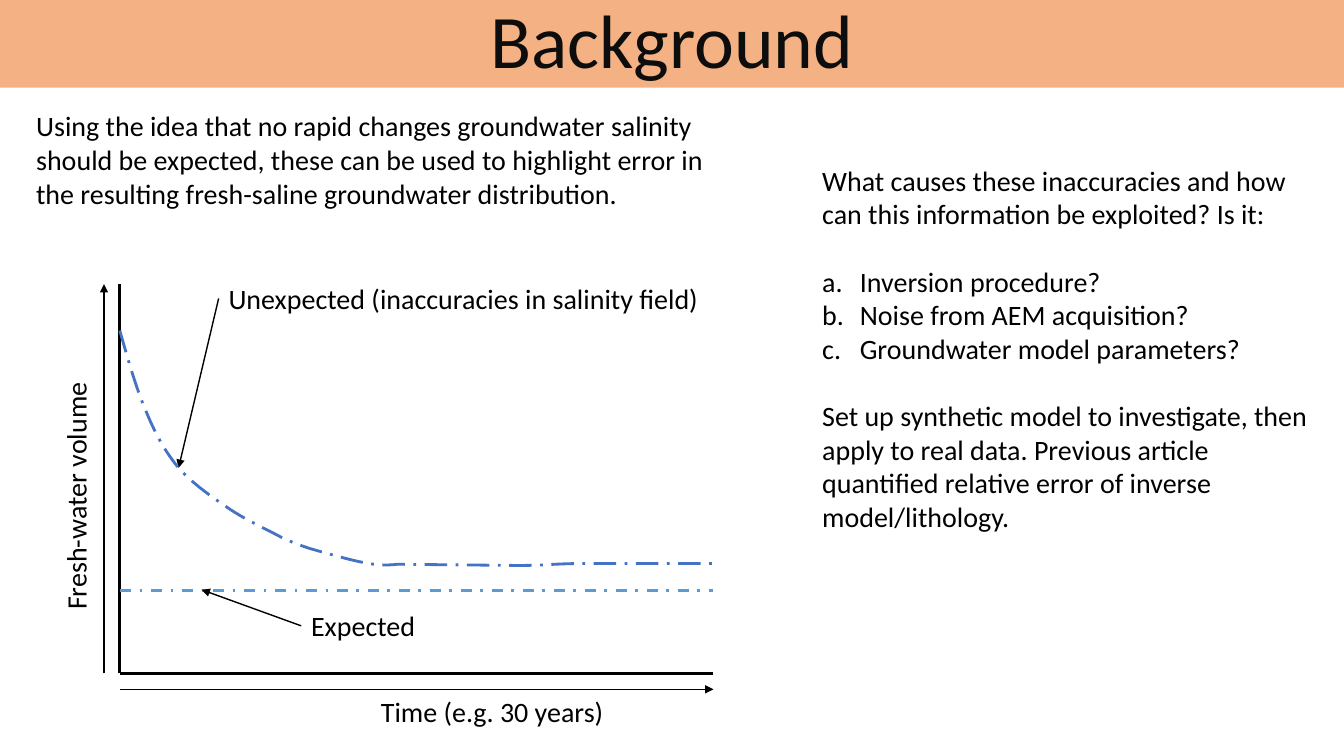
from lxml.etree import SubElement
from pptx import Presentation
from pptx.dml.color import RGBColor
from pptx.enum.dml import MSO_LINE
from pptx.enum.shapes import MSO_CONNECTOR, MSO_SHAPE
from pptx.enum.text import MSO_ANCHOR, PP_ALIGN
from pptx.oxml.ns import qn
from pptx.util import Cm, Pt

BLACK = RGBColor(0x00, 0x00, 0x00)
TITLE_INK = RGBColor(0x0D, 0x0D, 0x0D)
ORANGE = RGBColor(0xF4, 0xB1, 0x83)
LIGHT_BLUE = RGBColor(0x5B, 0x9B, 0xD5)
BLUE = RGBColor(0x44, 0x72, 0xC4)

LEFT, RIGHT, TOP, BASE = 3.02, 17.98, 7.16, 16.97
ARROW_X, ARROW_Y, EXPECTED_Y = 2.62, 17.37, 14.88
CURVE_STEPS = 12

deck = Presentation()
deck.slide_width, deck.slide_height = Cm(33.87), Cm(19.05)
slide = deck.slides.add_slide(deck.slide_layouts[6])
shapes = slide.shapes


def add_words(paragraph, words, size=20, color=BLACK):
    run = paragraph.add_run()
    run.text = words
    run.font.name = "Calibri"
    run.font.size = Pt(size)
    run.font.color.rgb = color


def add_frame(left, top, width, height, wrap, angle=0):
    box = shapes.add_textbox(Cm(left), Cm(top), Cm(width), Cm(height))
    box.rotation = angle
    box.text_frame.word_wrap = wrap
    return box.text_frame


for x1, y1, x2, y2, color, weight, dash, arrow in (
    (LEFT, BASE, LEFT, TOP, BLACK, 2.25, None, False),
    (LEFT, BASE, RIGHT, BASE, BLACK, 2.25, None, False),
    (LEFT, ARROW_Y, RIGHT, ARROW_Y, BLACK, 1, None, True),
    (ARROW_X, BASE, ARROW_X, TOP, BLACK, 1, None, True),
    (LEFT, EXPECTED_Y, RIGHT, EXPECTED_Y, LIGHT_BLUE, 2, MSO_LINE.DASH_DOT, False),
    (5.51, 7.52, 4.5, 11.79, BLACK, 1, None, True),
    (7.59, 15.77, 5.08, 14.86, BLACK, 1, None, True),
):
    stroke = shapes.add_connector(
        MSO_CONNECTOR.STRAIGHT, Cm(x1), Cm(y1), Cm(x2), Cm(y2))
    stroke.line.color.rgb = color
    stroke.line.width = Pt(weight)
    if dash:
        stroke.line.dash_style = dash
    if arrow:
        SubElement(stroke.line._get_or_add_ln(), qn("a:tailEnd"), type="triangle")
    SubElement(stroke._element.spPr, qn("a:effectLst"))

curve_start = (LEFT, 8.33)
curve_pieces = (
    ((3.23, 9.07), (3.43, 9.78), (3.68, 10.36)),
    ((3.91, 10.92), (4.14, 11.35), (4.5, 11.79)),
    ((4.85, 12.19), (5.38, 12.55), (5.82, 12.85)),
    ((6.25, 13.13), (6.76, 13.36), (7.09, 13.54)),
    ((7.42, 13.69), (7.42, 13.69), (7.8, 13.82)),
    ((8.15, 13.92), (8.94, 14.15), (9.3, 14.2)),
    ((9.68, 14.27), (10.01, 14.22), (10.01, 14.22)),
    ((10.01, 14.22), (13.03, 14.25), (13.03, 14.25)),
    ((13.77, 14.25), (13.72, 14.22), (14.55, 14.2)),
    ((15.37, 14.2), (16.66, 14.2), (17.96, 14.2)),
)
curve_points = []
piece_start = curve_start
for pull_out, pull_in, piece_end in curve_pieces:
    for step in range(1, CURVE_STEPS + 1):
        t = step / CURVE_STEPS
        curve_points.append(tuple(
            Cm((1 - t) ** 3 * a + 3 * (1 - t) ** 2 * t * b
               + 3 * (1 - t) * t ** 2 * c + t ** 3 * d)
            for a, b, c, d in zip(piece_start, pull_out, pull_in, piece_end)))
    piece_start = piece_end

outline = shapes.build_freeform(Cm(curve_start[0]), Cm(curve_start[1]))
outline.add_line_segments(curve_points, close=False)
unexpected_curve = outline.convert_to_shape()
unexpected_curve.shadow.inherit = False
unexpected_curve.fill.background()
unexpected_curve.line.color.rgb = BLUE
unexpected_curve.line.width = Pt(2)
unexpected_curve.line.dash_style = MSO_LINE.LONG_DASH_DOT

for label, left, top, width, angle in (
    ("Time (e.g. 30 years)", 9.35, 17.37, 6.17, 0),
    ("Fresh-water volume", -1.24, 11.91, 6.3, 270),
    ("Expected", 7.59, 15.21, 3.18, 0),
    ("Unexpected (inaccuracies in salinity field)", 5.51, 6.96, 12.5, 0),
):
    add_words(add_frame(left, top, width, 1.12, False, angle).paragraphs[0], label)

questions = add_frame(20.47, 3.99, 12.75, 11.38, True)
for index, (words, numbered, gap) in enumerate((
    ("What causes these inaccuracies and how can this information be exploited? Is it:",
     False, 0),
    ("Inversion procedure?", True, 24),
    ("Noise from AEM acquisition?", True, 0),
    ("Groundwater model parameters?", True, 0),
    ("Set up synthetic model to investigate, then apply to real data. Previous article "
     "quantified relative error of inverse model/lithology.", False, 24),
)):
    paragraph = questions.add_paragraph() if index else questions.paragraphs[0]
    if numbered:
        props = paragraph._p.get_or_add_pPr()
        props.set("marL", str(Cm(0.95)))
        props.set("indent", str(-Cm(0.95)))
        SubElement(props, qn("a:buFont"), typeface="+mj-lt")
        SubElement(props, qn("a:buAutoNum"), type="alphaLcPeriod")
    if gap:
        paragraph.space_before = Pt(gap)
    add_words(paragraph, words)

intro = add_frame(0.66, 2.62, 17.98, 2.82, True)
add_words(
    intro.paragraphs[0],
    "Using the idea that no rapid changes groundwater salinity should be expected, "
    "these can be used to highlight error in the resulting fresh-saline groundwater "
    "distribution.")

banner = shapes.add_shape(MSO_SHAPE.RECTANGLE, 0, Cm(-0.08), deck.slide_width, Cm(2.29))
banner.shadow.inherit = False
banner.fill.solid()
banner.fill.fore_color.rgb = ORANGE
banner.line.fill.background()
banner.text_frame.vertical_anchor = MSO_ANCHOR.BOTTOM
banner.text_frame.word_wrap = True
heading = banner.text_frame.paragraphs[0]
heading.alignment = PP_ALIGN.CENTER
heading.line_spacing = 0.8
add_words(heading, "Background", 54, TITLE_INK)

deck.save("out.pptx")
